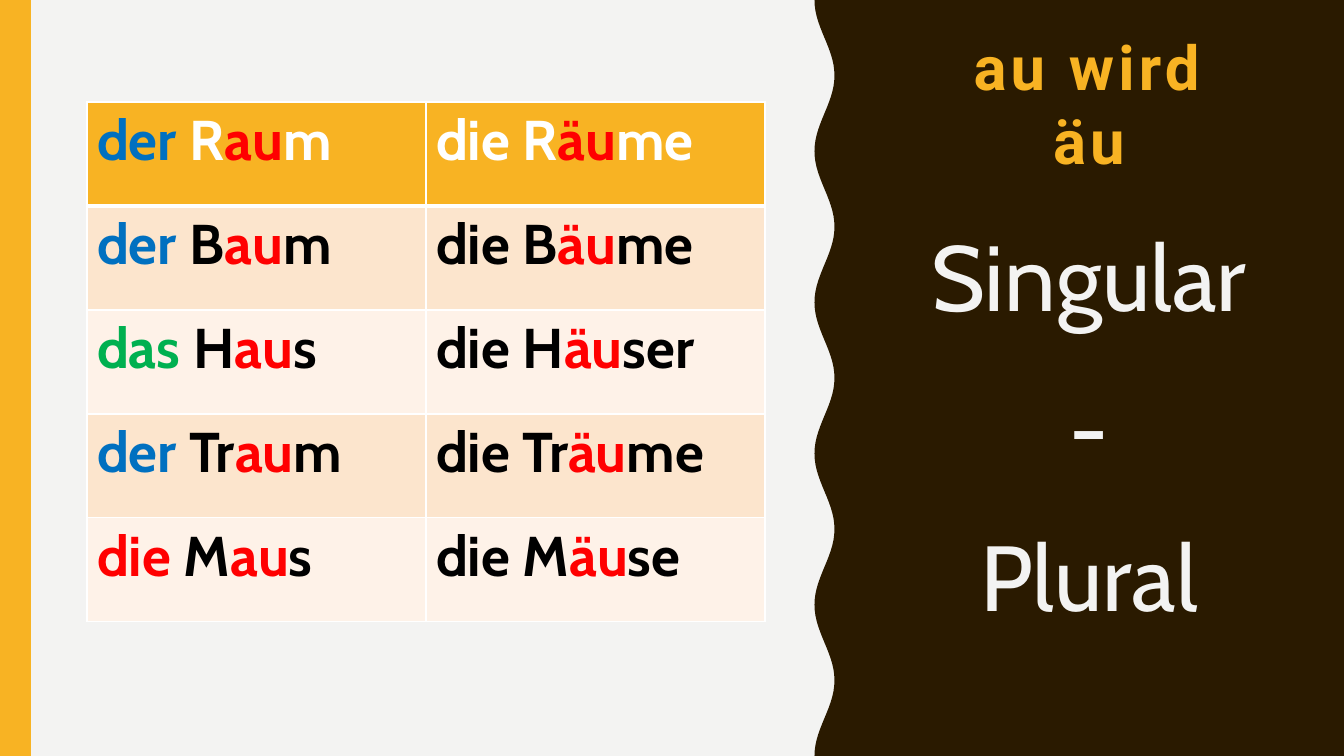
from math import cos, pi

from lxml.etree import SubElement
from pptx import Presentation
from pptx.dml.color import RGBColor
from pptx.enum.shapes import MSO_SHAPE
from pptx.enum.text import MSO_ANCHOR, MSO_AUTO_SIZE, PP_ALIGN
from pptx.oxml.ns import qn
from pptx.util import Emu, Pt

WIDTH, HEIGHT = 1344, 756
SCALE = 12192000 / WIDTH
AMBER = RGBColor(0xF8, 0xB3, 0x23)
BROWN = RGBColor(0x2A, 0x1A, 0x00)
PAPER = RGBColor(0xF3, 0xF3, 0xF2)
PEACH = RGBColor(0xFC, 0xE5, 0xCD)
CREAM = RGBColor(0xFE, 0xF2, 0xE8)
WHITE = RGBColor(0xFF, 0xFF, 0xFF)
BLACK = RGBColor(0x00, 0x00, 0x00)
BLUE = RGBColor(0x00, 0x70, 0xC0)
GREEN = RGBColor(0x00, 0xB0, 0x50)
RED = RGBColor(0xFF, 0x00, 0x00)

ARTICLE_COLORS = {"der": BLUE, "das": GREEN, "die": RED}
# article, stem, singular ending, plural ending
NOUNS = [
    ("der", "R", "m", "me"),
    ("der", "B", "m", "me"),
    ("das", "H", "s", "ser"),
    ("der", "Tr", "m", "me"),
    ("die", "M", "s", "se"),
]


def px(n):
    return Emu(round(n * SCALE))


def add_border(cell, side, points):
    """Draw a white line on one side (L, R, T or B) of a table cell."""
    ln = SubElement(cell._tc.get_or_add_tcPr(), qn(f"a:ln{side}"), w=str(Pt(points)))
    fill = SubElement(ln, qn("a:solidFill"))
    SubElement(fill, qn("a:srgbClr"), val=str(WHITE))


prs = Presentation()
prs.slide_width, prs.slide_height = px(WIDTH), px(HEIGHT)
s = prs.slides.add_slide(prs.slide_layouts[5])
s.background.fill.solid()
s.background.fill.fore_color.rgb = PAPER

# Dark panel whose left edge is five cosine waves, drawn from bottom to top
WAVES, STEPS = 5, 28
edge = []
for i in range(WAVES * STEPS, -1, -1):
    x = 824.5 - 10 * cos(2 * pi * i / STEPS)
    edge.append((px(x), px(HEIGHT * i / (WAVES * STEPS))))
builder = s.shapes.build_freeform(px(WIDTH), 0, scale=1.0)
builder.add_line_segments([(px(WIDTH), px(HEIGHT))] + edge, close=True)
panel = builder.convert_to_shape()
bar = s.shapes.add_shape(MSO_SHAPE.RECTANGLE, 0, 0, px(31), px(HEIGHT))
for sp, color in ((panel, BROWN), (bar, AMBER)):
    sp.shadow.inherit = False
    sp.fill.solid()
    sp.fill.fore_color.rgb = color
    sp.line.fill.background()

# The title placeholder comes first on a new slide: lift it above the panel
title = s.shapes.title
bar._element.addnext(title._element)
title.left, title.top, title.width, title.height = px(919), px(50), px(340), px(132)
tf = title.text_frame
tf.word_wrap = True
tf.auto_size = MSO_AUTO_SIZE.NONE
tf.vertical_anchor = MSO_ANCHOR.BOTTOM
p = tf.paragraphs[0]
p.alignment = PP_ALIGN.CENTER
p.font.name, p.font.size, p.font.bold = "Roboto", Pt(44), True
p.font.color.rgb = AMBER
r = p.add_run()
r.text = "au wird äu"
r._r.get_or_add_rPr().set("spc", "300")

COL, ROW = 339, 104
table = s.shapes.add_table(
    len(NOUNS), 2, px(87), px(102), px(2 * COL), px(len(NOUNS) * ROW)
).table
for column in table.columns:
    column.width = px(COL)
for row, (article, stem, singular, plural) in enumerate(NOUNS):
    table.rows[row].height = px(ROW)
    ink = WHITE if row == 0 else BLACK
    background = AMBER if row == 0 else (CREAM, PEACH)[row % 2]
    words = [
        [(article, ARTICLE_COLORS[article]), (f" {stem}", ink), ("au", RED), (singular, ink)],
        [(f"die {stem}", ink), ("äu", RED), (plural, ink)],
    ]
    for col, parts in enumerate(words):
        cell = table.cell(row, col)
        add_border(cell, "L", 1)
        add_border(cell, "R", 1)
        add_border(cell, "T", 3 if row == 1 else 1)
        add_border(cell, "B", 3 if row == 0 else 1)
        cell.fill.solid()
        cell.fill.fore_color.rgb = background
        p = cell.text_frame.paragraphs[0]
        p.font.name, p.font.size, p.font.bold = "Cabin", Pt(40), True
        for text, color in parts:
            r = p.add_run()
            r.text = text
            r.font.color.rgb = color

tf = s.shapes.add_textbox(px(919), px(192), px(340), px(458)).text_frame
tf.word_wrap = True
for i, text in enumerate(("Singular", "-", "Plural")):
    p = tf.add_paragraph() if i else tf.paragraphs[0]
    p.text = text
    p.alignment = PP_ALIGN.CENTER
    p.line_spacing = 1.2
    p.space_before = Pt(12 if i else 0)
    p.font.name, p.font.size = "Cabin", Pt(66)
    p.font.color.rgb = PAPER

prs.save("out.pptx")
